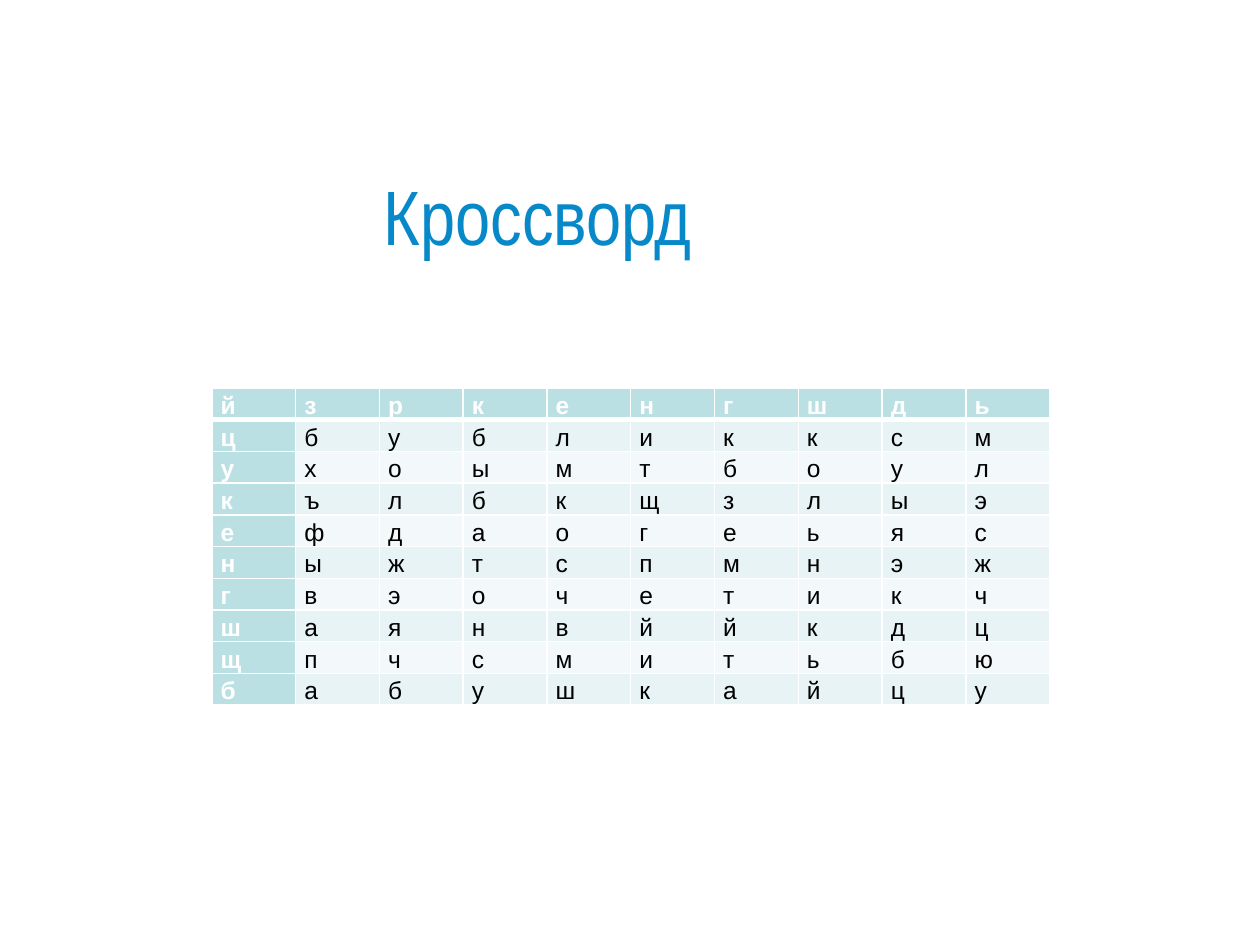
from lxml.etree import SubElement as Sub
from pptx import Presentation
from pptx.dml.color import RGBColor as RGB
from pptx.enum.text import MSO_ANCHOR as Anchor, PP_ALIGN as Align
from pptx.oxml.ns import qn
from pptx.util import Pt

WHITE = RGB(0xFF, 0xFF, 0xFF)
BLACK = RGB(0, 0, 0)
BLUE = RGB(0x06, 0x88, 0xC9)
TEAL = RGB(0xBB, 0xE0, 0xE3)
BANDS = [RGB(0xF3, 0xF9, 0xFA), RGB(0xE7, 0xF3, 0xF4)]

ROWS = [
    "йзркенгшдь",
    "цбубликксм",
    "ухоымтбоул",
    "кълбкщзлыэ",
    "ефдаогеьяс",
    "ныжтспмнэж",
    "гвэочетикч",
    "шаянвййкдц",
    "щпчсмитьбю",
    "бабушкайцу",
]
COL, ROW = Pt(47.88), Pt(18.06)


def assign(obj, **vals):
    for key, val in vals.items():
        setattr(obj, key, val)


def edge(cell, side, width):
    """Draw one white border; call before the cell is filled."""
    line = Sub(cell._tc.get_or_add_tcPr(), qn(f"a:ln{side}"), w=str(Pt(width)))
    fill = Sub(line, qn("a:solidFill"))
    Sub(fill, qn("a:srgbClr"), val=str(WHITE))


deck = Presentation()
assign(deck, slide_width=Pt(720), slide_height=Pt(540))
slide = deck.slides.add_slide(deck.slide_layouts[6])

# Letter grid
count = len(ROWS)
frame = slide.shapes.add_table(count, count, Pt(121), Pt(221.76),
                               COL * count, ROW * count)
grid = frame.table
for col in grid.columns:
    col.width = COL
for r, word in enumerate(ROWS):
    grid.rows[r].height = ROW
    for c, char in enumerate(word):
        cell = grid.cell(r, c)
        head = r == 0 or c == 0
        assign(cell, margin_left=Pt(5), margin_right=Pt(5),
               margin_top=0, margin_bottom=0)
        for side in "LRTB":
            thick = (r, side) in [(0, "B"), (1, "T")]
            edge(cell, side, 3 if thick else 1)
        cell.fill.solid()
        cell.fill.fore_color.rgb = TEAL if head else BANDS[r % 2]
        para = cell.text_frame.paragraphs[0]
        para.line_spacing = 1.15
        run = para.add_run()
        run.text = char
        assign(run.font, name="Arial", size=Pt(14), bold=head)
        run.font.color.rgb = WHITE if head else BLACK

# Title
box = slide.shapes.add_textbox(Pt(84.24), Pt(77.76), Pt(552.24), Pt(90))
text = box.text_frame
assign(text, word_wrap=True, vertical_anchor=Anchor.MIDDLE,
       margin_left=Pt(135))
para = text.paragraphs[0]
para.alignment = Align.LEFT
run = para.add_run()
run.text = "Кроссворд"
assign(run.font, name="Arial Narrow", size=Pt(44))
run.font.color.rgb = BLUE

deck.save("out.pptx")
